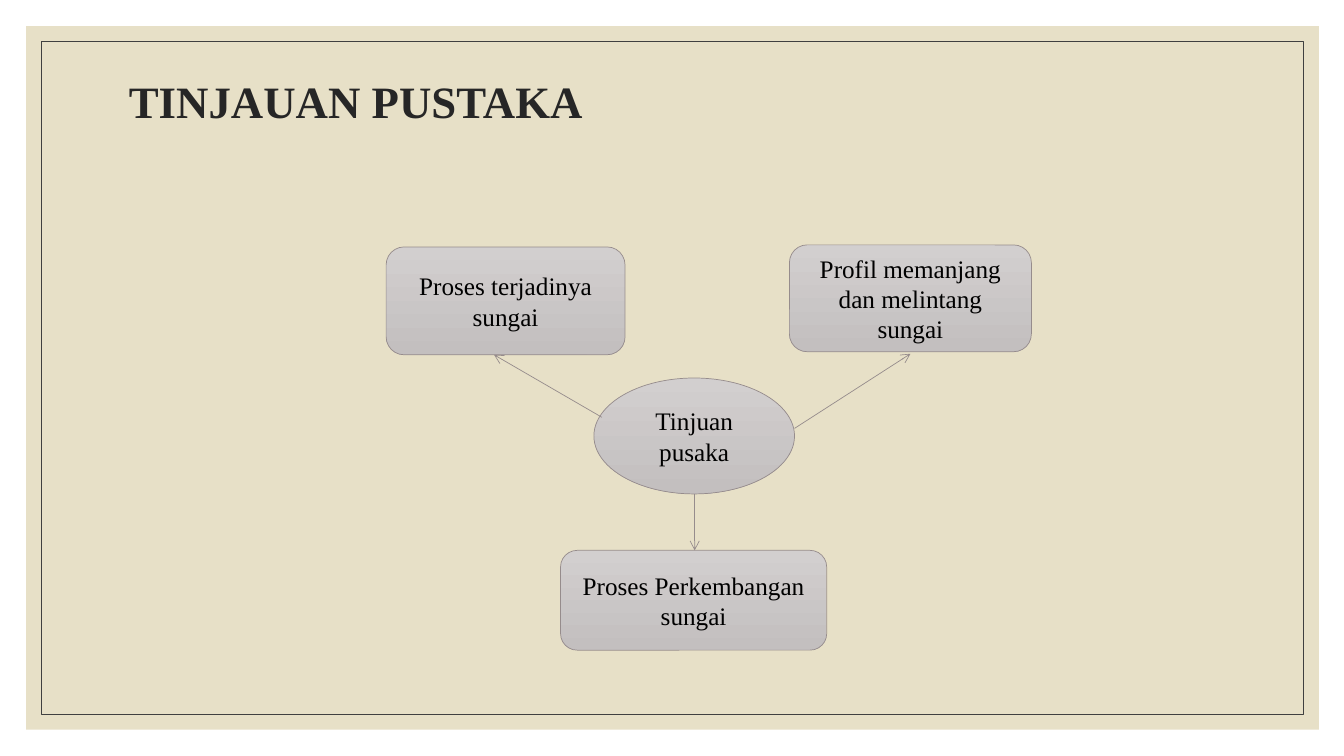
import pptx
import pptx.util
import pptx.dml.color
import pptx.enum.shapes
import pptx.enum.text
import pptx.oxml
import pptx.oxml.ns

PX = 9144
FONT = "Times New Roman"
SHAPE = pptx.enum.shapes.MSO_SHAPE


def rgb(color):
    return pptx.dml.color.RGBColor.from_string(color)


def write(sp, text, size=18, color="000000", bold=False, spacing=1.0):
    tf = sp.text_frame
    tf.word_wrap = True
    tf.vertical_anchor = pptx.enum.text.MSO_ANCHOR.MIDDLE
    p = tf.paragraphs[0]
    p.alignment = pptx.enum.text.PP_ALIGN.CENTER
    p.line_spacing = spacing
    r = p.add_run()
    r.text = text
    r.font.name = FONT
    r.font.size = pptx.util.Pt(size)
    r.font.bold = bold
    r.font.color.rgb = rgb(color)


prs = pptx.Presentation()
prs.slide_width = 1333 * PX
prs.slide_height = 750 * PX
s = prs.slides.add_slide(prs.slide_layouts[6])

panel = s.shapes.add_shape(SHAPE.RECTANGLE, 26 * PX, 26 * PX, 1282 * PX, 698 * PX)
panel.shadow.inherit = False
panel.fill.solid()
panel.fill.fore_color.rgb = rgb("E7E0C7")
panel.line.fill.background()

frame = s.shapes.add_shape(SHAPE.RECTANGLE, 41 * PX, 41 * PX, 1252 * PX, 668 * PX)
frame.shadow.inherit = False
frame.fill.background()
frame.line.color.rgb = rgb("404040")
frame.line.width = pptx.util.Pt(0.5)

title = s.shapes.add_textbox(117 * PX, 70 * PX, 472 * PX, 67 * PX)
write(title, "TINJAUAN PUSTAKA", size=32, color="262626", bold=True, spacing=0.9)

nodes = [
    (SHAPE.OVAL, 589, 375, 199, 115, "Tinjuan pusaka"),
    (SHAPE.ROUNDED_RECTANGLE, 383, 245, 237, 107, "Proses terjadinya sungai"),
    (SHAPE.ROUNDED_RECTANGLE, 783, 243, 240, 106, "Profil memanjang dan melintang sungai"),
    (SHAPE.ROUNDED_RECTANGLE, 556, 546, 264, 99, "Proses Perkembangan sungai"),
]
for kind, x, y, w, h, text in nodes:
    sp = s.shapes.add_shape(kind, x * PX, y * PX, w * PX, h * PX)
    sp.shadow.inherit = False
    sp.fill.gradient()
    sp.fill.gradient_angle = 270
    for stop, color in zip(sp.fill.gradient_stops, ("D2CFCF", "C3BFBF")):
        stop.color.rgb = rgb(color)
    sp.line.color.rgb = rgb("968C8C")
    sp.line.width = pptx.util.Pt(0.5)
    write(sp, text)

arrows = [(597, 414, 490, 352), (788, 425, 903, 351), (689, 490, 689, 546)]
for x1, y1, x2, y2 in arrows:
    arrow = s.shapes.add_connector(
        pptx.enum.shapes.MSO_CONNECTOR.STRAIGHT, x1 * PX, y1 * PX, x2 * PX, y2 * PX)
    arrow.line.color.rgb = rgb("968C8C")
    arrow.line.width = pptx.util.Pt(0.5)
    ln = arrow.line._get_or_add_ln()
    tail = pptx.oxml.parse_xml(
        f'<a:tailEnd {pptx.oxml.ns.nsdecls("a")} type="arrow"/>')
    ln.append(tail)
    effects = pptx.oxml.parse_xml(f'<a:effectLst {pptx.oxml.ns.nsdecls("a")}/>')
    ln.addnext(effects)

prs.save("out.pptx")
